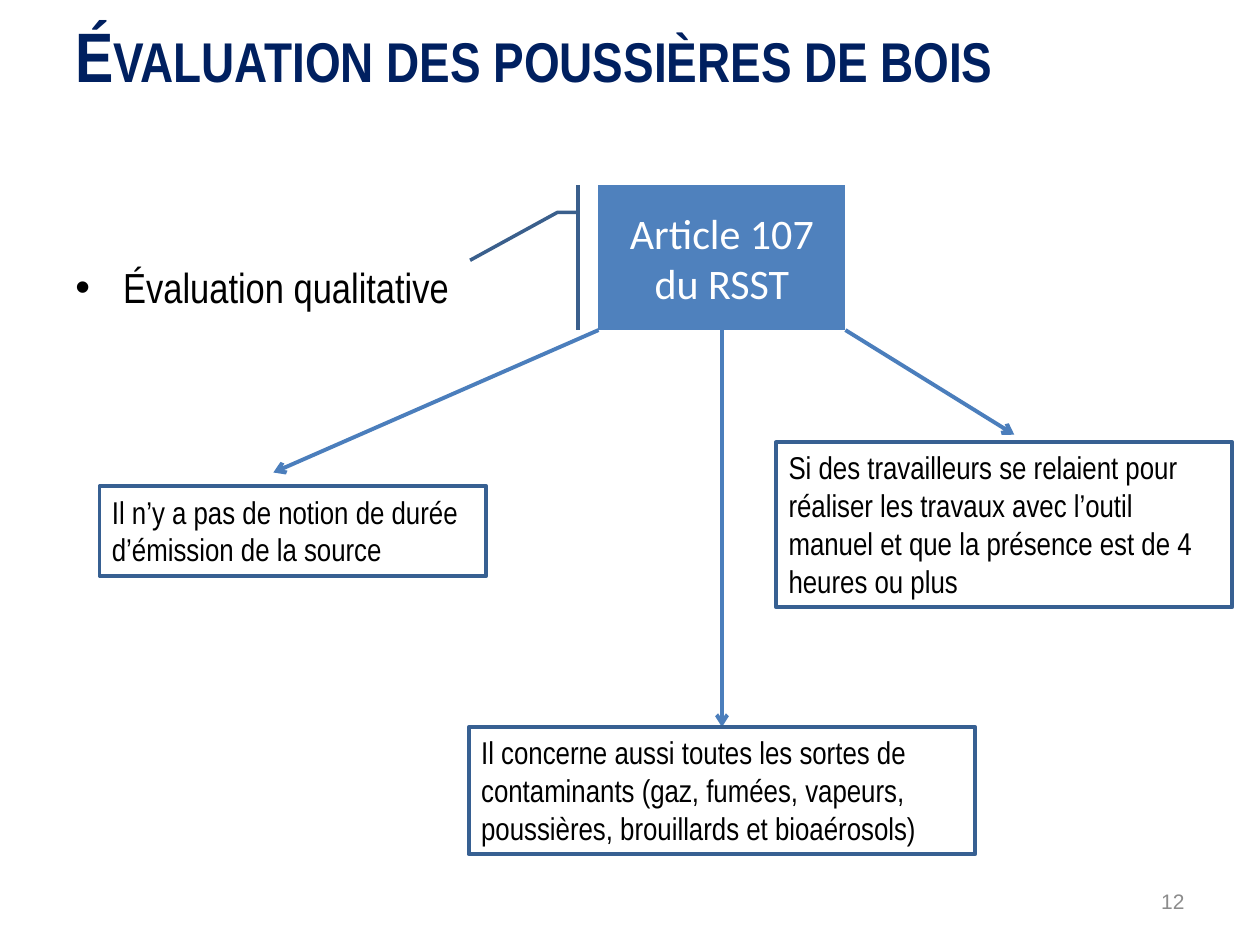
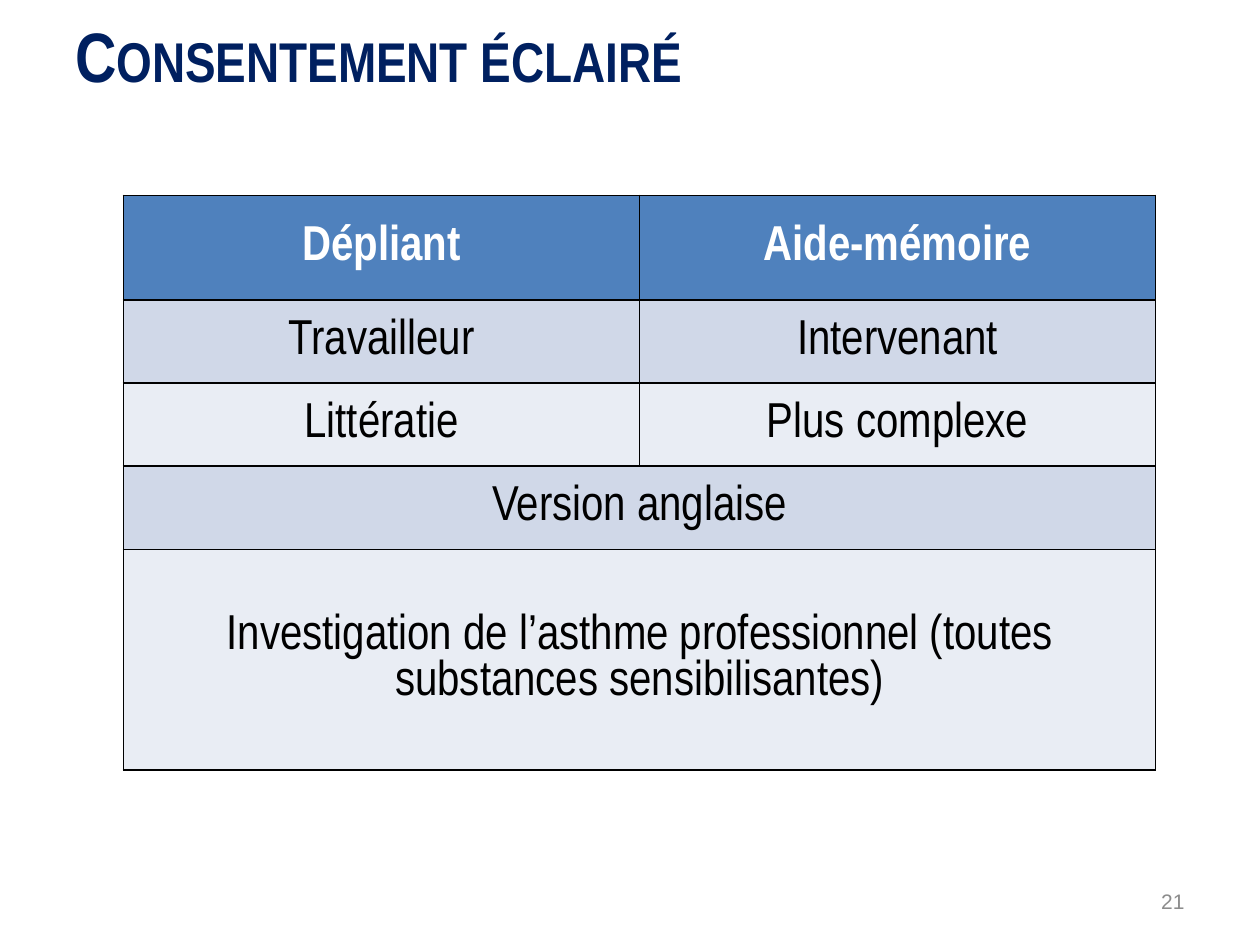
from lxml import etree
from pptx import Presentation
from pptx import util as u
from pptx.dml.color import RGBColor
from pptx.enum import shapes, text
from pptx.oxml import ns

NAVY = RGBColor(0x00, 0x20, 0x60)
BLUE = RGBColor(0x4F, 0x81, 0xBD)
CALLOUT_LINE = RGBColor(0x3A, 0x5F, 0x8C)
BOX_LINE = RGBColor(0x37, 0x60, 0x92)
ARROW = RGBColor(0x4B, 0x7E, 0xBC)
BAND_DARK = RGBColor(0xD0, 0xD8, 0xE8)
BAND_LIGHT = RGBColor(0xE9, 0xED, 0xF4)
GREY = RGBColor(0x8C, 0x8C, 0x8C)
BLACK = RGBColor(0, 0, 0)
WHITE = RGBColor(255, 255, 255)

NARROW = "Arial Narrow"
TITLE = dict(name=NARROW, size=u.Pt(40), bold=True)
BODY = dict(name=NARROW, size=u.Pt(24))
NOTE = dict(name=NARROW, size=u.Pt(18))
CALLOUT = dict(name="Calibri", size=u.Pt(24))
CELL = dict(name=NARROW, size=u.Pt(28))
NUMBER = dict(name="Arial", size=u.Pt(12))

LEFT, WIDTH = 0.5, 9  # shared text column

ARTICLE = ("Article 107 du RSST", (4.75, 1.47, 1.96, 1.15))
ARTICLE_LEADER = (0.188, -0.083, 0.188, -0.167, 0.518, -0.52)
# Text, box, share of the article's width where its arrow starts, arrow end
NOTES = [
    ("Il n’y a pas de notion de durée d’émission de la source",
     (0.79, 3.86, 3.07, 0.71), 0, (2.17, 3.75)),
    ("Il concerne aussi toutes les sortes de contaminants (gaz, fumées, "
     "vapeurs, poussières, brouillards et bioaérosols)",
     (3.72, 5.77, 4.02, 1.01), 0.5, (5.73, 5.77)),
    ("Si des travailleurs se relaient pour réaliser les travaux avec l’outil "
     "manuel et que la présence est de 4 heures ou plus",
     (6.16, 3.51, 3.62, 1.31), 1, (8.05, 3.45)),
]

# Row height and cells; a single cell spans both columns
CONSENT_ROWS = [
    (0.83, ["Dépliant", "Aide-mémoire"]),
    (0.66, ["Travailleur", "Intervenant"]),
    (0.66, ["Littératie", "Plus complexe"]),
    (0.66, ["Version anglaise"]),
    (1.75, ["Investigation de l’asthme professionnel "
            "(toutes substances sensibilisantes)"]),
]
CONSENT_AT = (0.98, 1.55, 8.19)


def inches(values):
    return [u.Inches(v) for v in values]


def sub(parent, tag, **attrs):
    return etree.SubElement(parent, ns.qn(tag), attrs)


def write(tf, content, style, color, align=text.PP_ALIGN.LEFT):
    tf.word_wrap = True
    p = tf.paragraphs[0]
    p.alignment = align
    r = p.add_run()
    r.text = content
    for key, value in style.items():
        setattr(r.font, key, value)
    r.font.color.rgb = color
    return p


def add_text(s, box, content, style, color, anchor=text.MSO_ANCHOR.TOP,
             align=text.PP_ALIGN.LEFT):
    tf = s.shapes.add_textbox(*inches(box)).text_frame
    tf.vertical_anchor = anchor
    return write(tf, content, style, color, align)


def add_slide(prs, title, number):
    """Blank slide with the shared title and page number."""
    s = prs.slides.add_slide(prs.slide_layouts[6])
    p = add_text(s, (LEFT, 0.05, WIDTH, 1.25), title, TITLE, NAVY)
    p.runs[0]._r.get_or_add_rPr().set("cap", "small")
    add_text(s, (7.17, 6.95, 2.33, 0.4), str(number), NUMBER, GREY,
             text.MSO_ANCHOR.MIDDLE, text.PP_ALIGN.RIGHT)
    return s


def add_box(s, kind, box, fill, line, width):
    sp = s.shapes.add_shape(kind, *inches(box))
    sp.shadow.inherit = False
    if fill is None:
        sp.fill.background()
    else:
        sp.fill.solid()
        sp.fill.fore_color.rgb = fill
    sp.line.color.rgb = line
    sp.line.width = u.Pt(width)
    return sp


def add_arrow(s, start, end):
    c = s.shapes.add_connector(shapes.MSO_CONNECTOR.STRAIGHT,
                               *inches(start + end))
    c.line.color.rgb = ARROW
    c.line.width = u.Pt(2.25)
    sub(c.line._get_or_add_ln(), "a:tailEnd", type="arrow")
    sub(c._element.spPr, "a:effectLst")


def set_cell(cell, fill):
    """Thin black borders, then the fill, which must follow them."""
    tcPr = cell._tc.get_or_add_tcPr()
    for side in "LRTB":
        ln = sub(tcPr, f"a:ln{side}", w=str(u.Pt(1)))
        sub(sub(ln, "a:solidFill"), "a:srgbClr", val=str(BLACK))
    cell.fill.solid()
    cell.fill.fore_color.rgb = fill
    cell.vertical_anchor = text.MSO_ANCHOR.MIDDLE


def build_evaluation(prs):
    s = add_slide(prs, "Évaluation des poussières de bois", 12)
    p = add_text(s, (LEFT, 2.03, WIDTH, 4.95), "Évaluation qualitative",
                 BODY, BLACK)
    pPr = p._p.get_or_add_pPr()
    indent = u.Inches(0.38)
    pPr.set("marL", str(indent))
    pPr.set("indent", str(-indent))
    sub(pPr, "a:buFont", typeface="Arial")
    sub(pPr, "a:buChar", char="•")

    label, box = ARTICLE
    sp = add_box(s, shapes.MSO_SHAPE.LINE_CALLOUT_2_ACCENT_BAR, box,
                 BLUE, CALLOUT_LINE, 2)
    for i, value in enumerate(ARTICLE_LEADER):
        sp.adjustments[i] = value
    sp.text_frame.vertical_anchor = text.MSO_ANCHOR.MIDDLE
    write(sp.text_frame, label, CALLOUT, WHITE, text.PP_ALIGN.CENTER)

    left, top, width, height = box
    for content, note_box, share, end in NOTES:
        add_arrow(s, (left + share * width, top + height), end)
        sp = add_box(s, shapes.MSO_SHAPE.RECTANGLE, note_box,
                     None, BOX_LINE, 2.25)
        sp.text_frame.vertical_anchor = text.MSO_ANCHOR.TOP
        write(sp.text_frame, content, NOTE, BLACK)


def build_consent(prs):
    s = add_slide(prs, "Consentement éclairé", 21)
    height = sum(h for h, _ in CONSENT_ROWS)
    table = s.shapes.add_table(len(CONSENT_ROWS), 2,
                               *inches((*CONSENT_AT, height))).table
    for row, (row_height, labels) in enumerate(CONSENT_ROWS):
        table.rows[row].height = u.Inches(row_height)
        header = row == 0
        fill = BLUE if header else (BAND_LIGHT, BAND_DARK)[row % 2]
        for col in range(2):
            set_cell(table.cell(row, col), fill)
        if len(labels) == 1:
            table.cell(row, 0).merge(table.cell(row, 1))
        for col, label in enumerate(labels):
            write(table.cell(row, col).text_frame, label,
                  {**CELL, "bold": header}, WHITE if header else BLACK,
                  text.PP_ALIGN.CENTER)


def main():
    prs = Presentation()
    prs.slide_width, prs.slide_height = inches((10, 7.5))
    build_evaluation(prs)
    build_consent(prs)
    prs.save("out.pptx")


if __name__ == "__main__":
    main()
